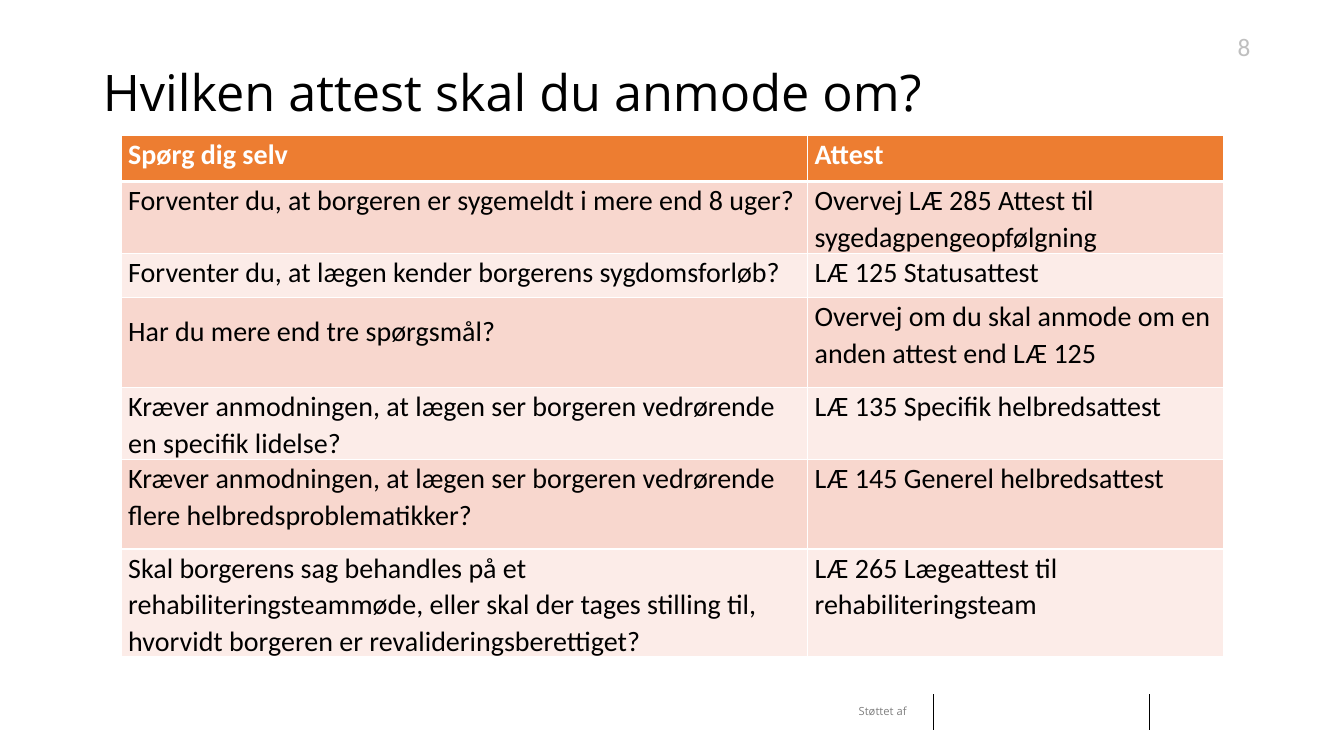
from dataclasses import dataclass

from lxml.etree import SubElement
from pptx import Presentation
from pptx.dml.color import RGBColor
from pptx.enum.shapes import MSO_CONNECTOR
from pptx.enum.text import MSO_ANCHOR, MSO_AUTO_SIZE, PP_ALIGN
from pptx.oxml import parse_xml
from pptx.oxml.ns import nsdecls, qn
from pptx.util import Emu, Pt

# The slide is a grid of 160 columns by 90 rows of square units
COLUMNS, ROWS, UNIT = 160, 90, 76200


@dataclass(frozen=True)
class Theme:
    heading_font: str = "Open Sans"
    body_font: str = "Calibri"
    ink: str = "000000"
    white: str = "FFFFFF"
    header: str = "ED7D31"
    bands: tuple = ("F8D7CE", "FCECE8")
    footer_grey: str = "808080"
    number_grey: str = "BFBFBF"
    title_size: int = 36
    table_size: int = 20
    number_size: int = 18
    footer_size: int = 8


@dataclass(frozen=True)
class Box:
    x: float
    y: float
    w: float
    h: float

    def emu(self):
        return [units(n) for n in (self.x, self.y, self.w, self.h)]


THEME = Theme()
QUESTIONS = [
    ("Spørg dig selv", "Attest"),
    ("Forventer du, at borgeren er sygemeldt i mere end 8 uger?",
     "Overvej LÆ 285 Attest til sygedagpengeopfølgning"),
    ("Forventer du, at lægen kender borgerens sygdomsforløb?",
     "LÆ 125 Statusattest"),
    ("Har du mere end tre spørgsmål?",
     "Overvej om du skal anmode om en anden attest end LÆ 125"),
    ("Kræver anmodningen, at lægen ser borgeren vedrørende en specifik lidelse?",
     "LÆ 135 Specifik helbredsattest"),
    ("Kræver anmodningen, at lægen ser borgeren vedrørende flere helbredsproblematikker?",
     "LÆ 145 Generel helbredsattest"),
    ("Skal borgerens sag behandles på et rehabiliteringsteammøde, eller skal der "
     "tages stilling til, hvorvidt borgeren er revalideringsberettiget?",
     "LÆ 265 Lægeattest til rehabiliteringsteam"),
]
COLUMN_WIDTHS = (81.72, 49.56)
SINGLE, DOUBLE = 5.28, 10.68
ROW_HEIGHTS = (5.52, 7.92, SINGLE, DOUBLE, SINGLE, DOUBLE, DOUBLE)
SPACIOUS_CELL = (3, 0)


def units(count):
    return Emu(round(count * UNIT))


def style(paragraph, font_name, size, color, bold=False):
    font = paragraph.font
    font.name, font.size, font.bold = font_name, Pt(size), bold
    font.color.rgb = RGBColor.from_string(color)


def add_label(slide, box, text, font_name, size, color, wrap):
    frame = slide.shapes.add_textbox(*box.emu()).text_frame
    frame.word_wrap = wrap
    frame.auto_size = MSO_AUTO_SIZE.SHAPE_TO_FIT_TEXT
    frame.text = text
    style(frame.paragraphs[0], font_name, size, color)


def add_footer(slide, box):
    # Two dividers leave room for the sponsors beside the caption
    for offset in (10.08, box.w):
        x = units(box.x + offset)
        divider = slide.shapes.add_connector(
            MSO_CONNECTOR.STRAIGHT, x, units(box.y), x, units(box.y + box.h))
        divider.line.color.rgb = RGBColor.from_string(THEME.ink)
        divider.line.width = Pt(0.5)
        SubElement(divider._element.spPr, qn("a:effectLst"))
    caption = Box(box.x, box.y + 0.6, 8.28, 2.88)
    add_label(slide, caption, "Støttet af", THEME.heading_font,
              THEME.footer_size, THEME.footer_grey, wrap=False)


def add_title(slide, box, text):
    title = slide.shapes.title
    title.left, title.top, title.width, title.height = box.emu()
    frame = title.text_frame
    frame.text = text
    frame.word_wrap = True
    frame.auto_size = MSO_AUTO_SIZE.NONE
    frame.vertical_anchor = MSO_ANCHOR.TOP
    heading = frame.paragraphs[0]
    heading.alignment = PP_ALIGN.LEFT
    heading.line_spacing = 0.9
    style(heading, THEME.heading_font, THEME.title_size, THEME.ink)


def set_borders(cell, top, bottom):
    # Borders come before the fill in the cell properties
    properties = cell._tc.get_or_add_tcPr()
    for index, (side, points) in enumerate(
            (("L", 1), ("R", 1), ("T", top), ("B", bottom))):
        properties.insert(index, parse_xml(
            f'<a:ln{side} {nsdecls("a")} w="{Pt(points)}"><a:solidFill>'
            f'<a:srgbClr val="{THEME.white}"/></a:solidFill></a:ln{side}>'))


def fill_cell(cell, text, row, column):
    is_header = row == 0
    cell.margin_left = cell.margin_right = units(0.86)
    cell.margin_top = cell.margin_bottom = 0
    cell.fill.solid()
    fill = THEME.header if is_header else THEME.bands[(row - 1) % 2]
    cell.fill.fore_color.rgb = RGBColor.from_string(fill)
    set_borders(cell, top=3 if row == 1 else 1, bottom=3 if is_header else 1)
    cell.text = text
    paragraph = cell.text_frame.paragraphs[0]
    paragraph.line_spacing = 1.5 if (row, column) == SPACIOUS_CELL else 1.07
    paragraph.space_after = Pt(8)
    style(paragraph, THEME.body_font, THEME.table_size,
          THEME.white if is_header else THEME.ink, bold=is_header)


def add_question_table(slide, box):
    table = slide.shapes.add_table(
        len(QUESTIONS), len(COLUMN_WIDTHS), *box.emu()).table
    for column, width in zip(table.columns, COLUMN_WIDTHS):
        column.width = units(width)
    for row, height in zip(table.rows, ROW_HEIGHTS):
        row.height = units(height)
    for row, texts in enumerate(QUESTIONS):
        for column, text in enumerate(texts):
            fill_cell(table.cell(row, column), text, row, column)


def add_page_number(slide, box):
    add_label(slide, box, "8", THEME.body_font,
              THEME.number_size, THEME.number_grey, wrap=True)


def main():
    deck = Presentation()
    deck.slide_width, deck.slide_height = units(COLUMNS), units(ROWS)
    slide = deck.slides.add_slide(deck.slide_layouts[5])
    slide.background.fill.solid()
    slide.background.fill.fore_color.rgb = RGBColor.from_string(THEME.white)
    add_footer(slide, Box(101.04, 82.68, 35.76, 4.2))
    add_title(slide, Box(11.04, 7.44, 138, 14.52), "Hvilken attest skal du anmode om?")
    add_question_table(slide, Box(14.4, 16.08, sum(COLUMN_WIDTHS), sum(ROW_HEIGHTS)))
    add_page_number(slide, Box(146.16, 3.12, 3.6, 4.8))
    deck.save("out.pptx")


if __name__ == "__main__":
    main()
